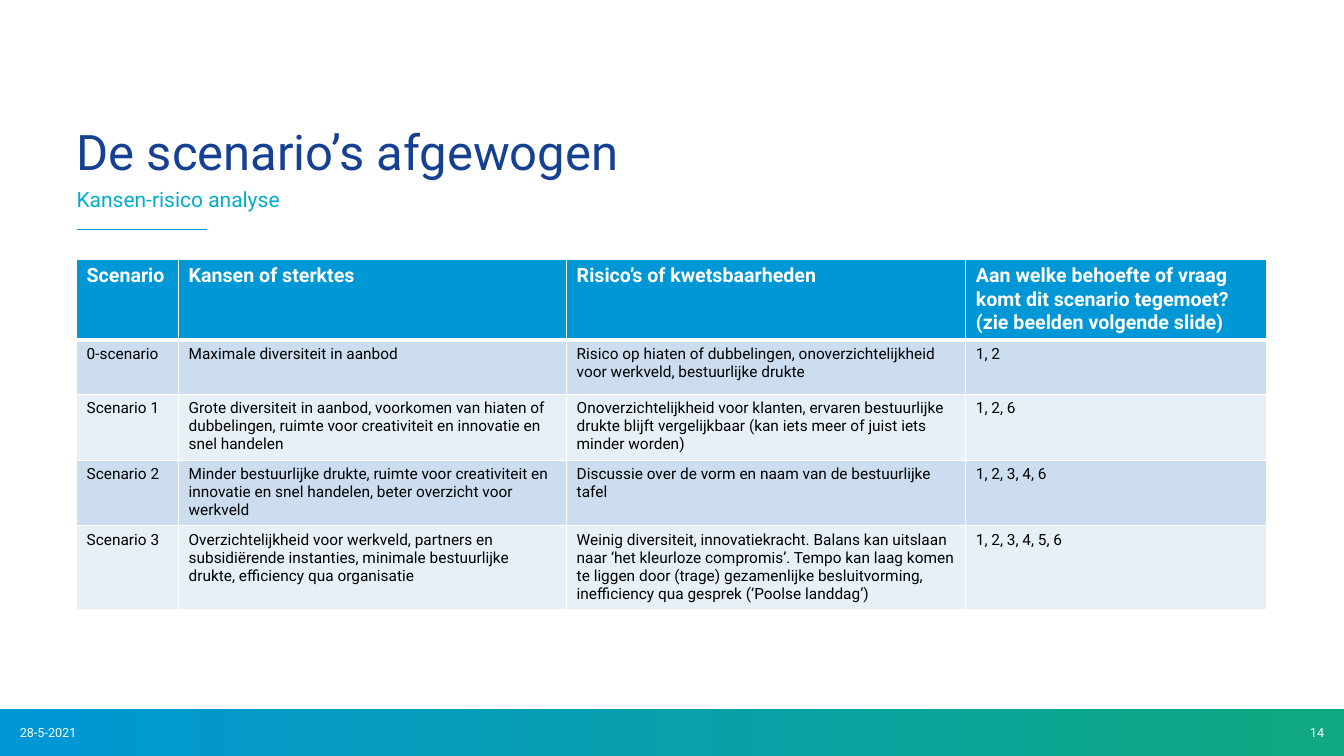
from lxml import etree
from pptx import Presentation
from pptx.dml.color import RGBColor
from pptx.enum.shapes import MSO_CONNECTOR, MSO_SHAPE
from pptx.enum.text import MSO_ANCHOR, PP_ALIGN
from pptx.oxml.ns import qn
from pptx.util import Cm, Pt

RECTANGLE = MSO_SHAPE.RECTANGLE
STRAIGHT = MSO_CONNECTOR.STRAIGHT
TOP, MIDDLE, BOTTOM = MSO_ANCHOR.TOP, MSO_ANCHOR.MIDDLE, MSO_ANCHOR.BOTTOM
LEFT, RIGHT = PP_ALIGN.LEFT, PP_ALIGN.RIGHT

WHITE = RGBColor(0xFF, 0xFF, 0xFF)
BLACK = RGBColor(0, 0, 0)
NAVY = RGBColor(0x16, 0x41, 0x93)
TURQUOISE = RGBColor(0x00, 0xAE, 0xCA)
BLUE = RGBColor(0x00, 0x97, 0xD6)
GREEN = RGBColor(0x0F, 0xA8, 0x80)
BAND_DARK = RGBColor(0xCC, 0xDD, 0xF0)
BAND_LIGHT = RGBColor(0xE7, 0xEF, 0xF7)

FONT = "Roboto"
SLIDE_WIDTH, SLIDE_HEIGHT = 33.87, 19.05
MARGIN, CONTENT_WIDTH = 1.93, 30
FOOTER_TOP, FOOTER_HEIGHT = 17.86, 1.19

TITLE_FORMAT = {"size": Pt(35), "color": NAVY}
SUBTITLE_FORMAT = {"size": Pt(15), "color": TURQUOISE}
FOOTER_FORMAT = {"size": Pt(9), "color": WHITE}
HEADER_FORMAT = {"size": Pt(14), "bold": True, "color": WHITE}
BODY_FORMAT = {"size": Pt(11), "bold": False, "color": BLACK}

COLUMN_WIDTHS = [2.57, 9.78, 10.06, 7.57]
ROW_HEIGHT = 1.37
ROWS = [
    ["Scenario", "Kansen of sterktes", "Risico’s of kwetsbaarheden",
     "Aan welke behoefte of vraag komt dit scenario tegemoet?\n"
     "(zie beelden volgende slide)"],
    ["0-scenario", "Maximale diversiteit in aanbod",
     "Risico op hiaten of dubbelingen, onoverzichtelijkheid voor werkveld, "
     "bestuurlijke drukte", "1, 2"],
    ["Scenario 1",
     "Grote diversiteit in aanbod, voorkomen van hiaten of dubbelingen, "
     "ruimte voor creativiteit en innovatie en snel handelen",
     "Onoverzichtelijkheid voor klanten, ervaren bestuurlijke drukte blijft "
     "vergelijkbaar (kan iets meer of juist iets minder worden)", "1, 2, 6"],
    ["Scenario 2",
     "Minder bestuurlijke drukte, ruimte voor creativiteit en innovatie en "
     "snel handelen, beter overzicht voor werkveld",
     "Discussie over de vorm en naam van de bestuurlijke tafel",
     "1, 2, 3, 4, 6"],
    ["Scenario 3",
     "Overzichtelijkheid voor werkveld, partners en subsidiërende "
     "instanties, minimale bestuurlijke drukte, efficiency qua organisatie",
     "Weinig diversiteit, innovatiekracht. Balans kan uitslaan naar ‘het "
     "kleurloze compromis’. Tempo kan laag komen te liggen door (trage) "
     "gezamenlijke besluitvorming, inefficiency qua gesprek "
     "(‘Poolse landdag’)", "1, 2, 3, 4, 5, 6"],
]


def fill_text(frame, text, text_format, align=LEFT):
    frame.text = text
    for para in frame.paragraphs:
        para.alignment = align
        for span in para.runs:
            span.font.name = FONT
            for name, value in text_format.items():
                if name == "color":
                    span.font.color.rgb = value
                else:
                    setattr(span.font, name, value)


def set_frame(frame, anchor):
    """Give a text frame no margins, wrapping and the given anchor."""
    values = {"margin_left": 0, "margin_top": 0, "margin_right": 0,
              "margin_bottom": 0, "word_wrap": True,
              "vertical_anchor": anchor}
    for name, value in values.items():
        setattr(frame, name, value)


def add_text(page, place, text, text_format, anchor=TOP, align=LEFT):
    box = page.shapes.add_textbox(*map(Cm, place))
    set_frame(box.text_frame, anchor)
    fill_text(box.text_frame, text, text_format, align)


def add_title(page, text):
    title = page.shapes.title
    place = {"left": MARGIN, "top": 3.23, "width": CONTENT_WIDTH,
             "height": 1.3}
    for name, value in place.items():
        setattr(title, name, Cm(value))
    set_frame(title.text_frame, BOTTOM)
    fill_text(title.text_frame, text, TITLE_FORMAT)
    title.text_frame.paragraphs[0].line_spacing = 0.8


def add_footer_band(page):
    band = page.shapes.add_shape(RECTANGLE, 0, Cm(FOOTER_TOP),
                                 Cm(SLIDE_WIDTH), Cm(FOOTER_HEIGHT))
    band.shadow.inherit = False
    band.line.fill.background()
    band.fill.gradient()
    band.fill.gradient_angle = 0
    stops = [(0.01, BLUE), (0.99, GREEN)]
    for stop, (position, color) in zip(band.fill.gradient_stops, stops):
        stop.position = position
        stop.color.rgb = color


def add_rule(page):
    rule = page.shapes.add_connector(STRAIGHT, Cm(MARGIN), Cm(5.77),
                                     Cm(MARGIN + 3.28), Cm(5.77))
    rule.line.color.rgb = BLUE
    rule.line.width = Pt(0.6)
    etree.SubElement(rule._element.spPr, qn("a:effectLst"))


def set_borders(cell, widths):
    """Draw white cell borders; widths maps each side to points."""
    properties = cell._tc.get_or_add_tcPr()
    for side, width in widths.items():
        line = etree.SubElement(properties, qn(f"a:ln{side}"),
                                w=str(Pt(width)))
        fill = etree.SubElement(line, qn("a:solidFill"))
        etree.SubElement(fill, qn("a:srgbClr"), val=str(WHITE))


def add_scenario_table(page):
    frame = page.shapes.add_table(
        len(ROWS), len(COLUMN_WIDTHS), Cm(MARGIN), Cm(6.54),
        Cm(CONTENT_WIDTH), Cm(ROW_HEIGHT * len(ROWS)))
    table = frame.table
    for column, width in zip(table.columns, COLUMN_WIDTHS):
        column.width = Cm(width)
    for row_index, texts in enumerate(ROWS):
        table.rows[row_index].height = Cm(ROW_HEIGHT)
        is_header = row_index == 0
        band = BAND_DARK if row_index % 2 else BAND_LIGHT
        borders = {"L": 1, "R": 1, "T": 3 if row_index == 1 else 1,
                   "B": 3 if is_header else 1}
        for column_index, text in enumerate(texts):
            cell = table.cell(row_index, column_index)
            set_borders(cell, borders)
            cell.fill.solid()
            cell.fill.fore_color.rgb = BLUE if is_header else band
            fill_text(cell.text_frame, text,
                      HEADER_FORMAT if is_header else BODY_FORMAT)


def main():
    deck = Presentation()
    deck.slide_width, deck.slide_height = Cm(SLIDE_WIDTH), Cm(SLIDE_HEIGHT)
    page = deck.slides.add_slide(deck.slide_layouts[5])
    add_footer_band(page)
    add_rule(page)
    add_title(page, "De scenario’s afgewogen")
    add_text(page, (MARGIN, 4.7, CONTENT_WIDTH, 0.89),
             "Kansen-risico analyse", SUBTITLE_FORMAT)
    add_text(page, (0.5, 18.16, 2.77, 0.6), "28-5-2021", FOOTER_FORMAT,
             MIDDLE)
    add_text(page, (30.6, 18.16, 2.77, 0.6), "14", FOOTER_FORMAT, MIDDLE,
             RIGHT)
    add_scenario_table(page)
    deck.save("out.pptx")


if __name__ == "__main__":
    main()
